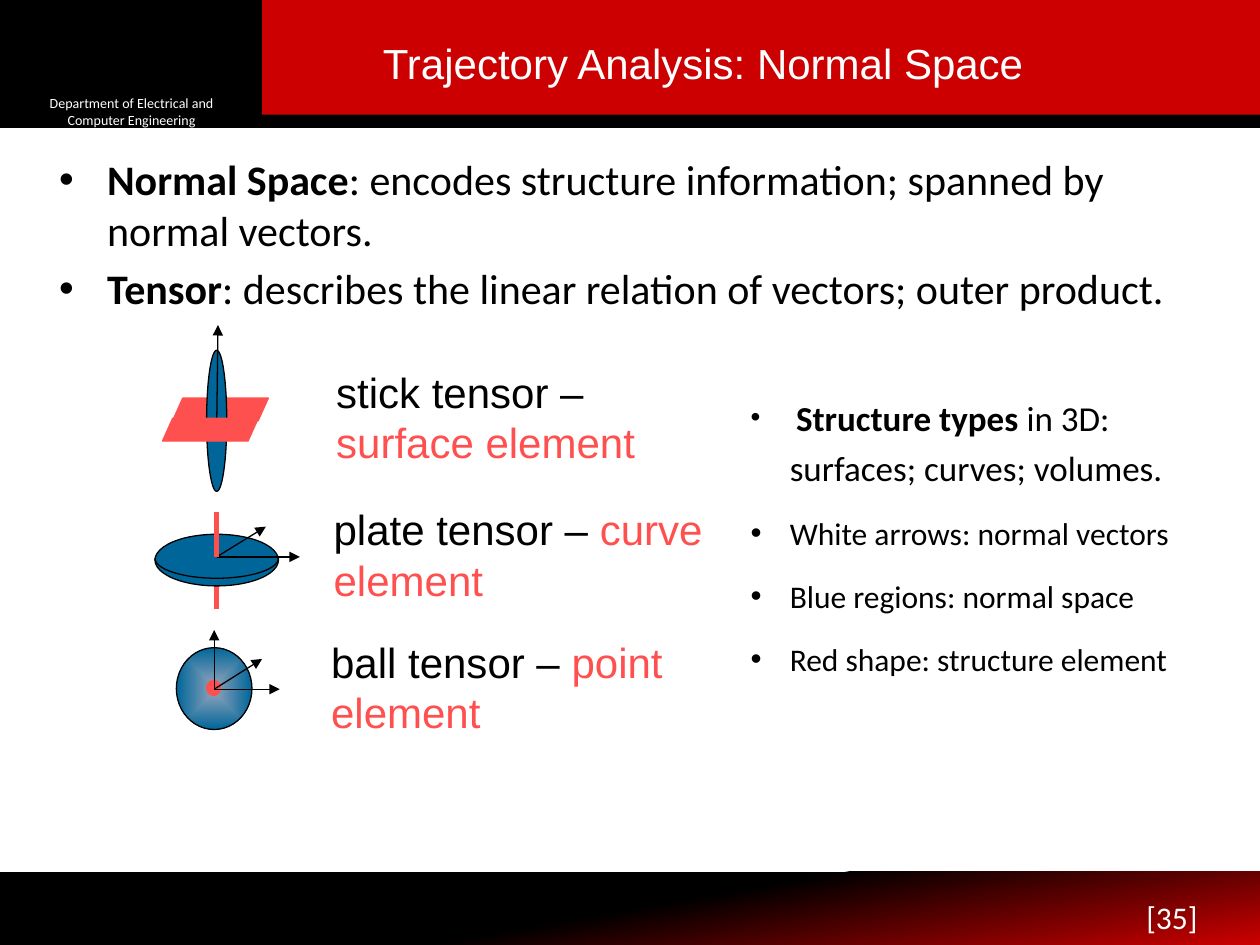
"""Builds the lecture slide on normal space and the three tensor types."""
import math
from dataclasses import dataclass

import pptx
import pptx.util
from lxml import etree
from pptx.dml.color import RGBColor
from pptx.enum.shapes import MSO_CONNECTOR, MSO_SHAPE
from pptx.enum.text import MSO_ANCHOR, MSO_AUTO_SIZE, PP_ALIGN
from pptx.oxml import parse_xml
from pptx.oxml.ns import nsdecls, qn
from pptx.util import Inches, Pt


@dataclass(frozen=True)
class Theme:
    black: str = "000000"
    white: str = "FFFFFF"
    banner: str = "CC0000"
    normal: str = "006699"
    glow: str = "8FA2BB"
    element: str = "FF5050"
    heading_font: str = "Arial"
    body_font: str = "Calibri"
    large: int = 24
    medium: int = 20
    note: int = 18
    lead: int = 16
    small: int = 8


theme = Theme()


def add_block(shapes, kind, bounds, fill, outline=None, weight=0.75):
    block = shapes.add_shape(kind, *map(Inches, bounds))
    block.shadow.inherit = False
    block.fill.solid()
    block.fill.fore_color.rgb = RGBColor.from_string(fill)
    if outline:
        block.line.color.rgb = RGBColor.from_string(outline)
        block.line.width = Pt(weight)
    else:
        block.line.fill.background()
    return block


def write(para, spans, size, font=theme.body_font, color=theme.black, indent=None):
    if indent:
        properties = para._p.get_or_add_pPr()
        properties.set("marL", str(Inches(indent)))
        properties.set("indent", str(-Inches(indent)))
        etree.SubElement(properties, qn("a:buFont")).set("typeface", "Arial")
        etree.SubElement(properties, qn("a:buChar")).set("char", "•")
    para.font.name = font
    para.font.size = Pt(size)
    para.font.color.rgb = RGBColor.from_string(color)
    for text, style in spans:
        span = para.add_run()
        span.text = text
        if "bold" in style:
            span.font.bold = style["bold"]
        if "size" in style:
            span.font.size = Pt(style["size"])
        if "color" in style:
            span.font.color.rgb = RGBColor.from_string(style["color"])


deck = pptx.Presentation()
deck.slide_width, deck.slide_height = Inches(10), Inches(7.5)
page = deck.slides.add_slide(deck.slide_layouts[1])

footer = add_block(page.shapes, MSO_SHAPE.RECTANGLE, (0, 6.92, 10, 0.58), theme.black)
footer.fill.gradient()
footer.fill.gradient_angle = 280
for stop, position, color in zip(footer.fill.gradient_stops, (0.5, 1), (theme.black, theme.banner)):
    stop.position = position
    stop.color.rgb = RGBColor.from_string(color)
add_block(page.shapes, MSO_SHAPE.RECTANGLE, (0, 0, 10, 1), theme.black, theme.black, 2)
add_block(page.shapes, MSO_SHAPE.RECTANGLE, (2.08, -0.01, 7.92, 0.92), theme.banner)
department = add_block(page.shapes, MSO_SHAPE.RECTANGLE, (0.17, 0.76, 1.75, 0.25), theme.black)
department.text_frame.vertical_anchor = MSO_ANCHOR.MIDDLE
para = department.text_frame.paragraphs[0]
para.alignment = PP_ALIGN.CENTER
write(para, [("Department of Electrical and Computer Engineering", {})], theme.small, color=theme.white)

title, body = page.shapes.title, page.placeholders[1]
for holder, bounds in ((title, (1.04, 0.25, 9.08, 0.64)), (body, (0.37, 1.17, 9.22, 1.42))):
    holder.element.getparent().append(holder.element)
    holder.left, holder.top, holder.width, holder.height = map(Inches, bounds)
    holder.text_frame.auto_size = MSO_AUTO_SIZE.NONE
    holder.text_frame.vertical_anchor = MSO_ANCHOR.TOP

para = title.text_frame.paragraphs[0]
para.alignment = PP_ALIGN.CENTER
write(para, [("Trajectory Analysis: Normal Space", {})], theme.large, theme.heading_font, theme.white)

definitions = [
    ("Normal Space", ": encodes structure information; spanned by normal vectors."),
    ("Tensor", ": describes the linear relation of vectors; outer product."),
]
for index, (term, meaning) in enumerate(definitions):
    para = body.text_frame.add_paragraph() if index else body.text_frame.paragraphs[0]
    para.space_before = Pt(4.8 if index else 0)
    write(para, [(term, {"bold": True}), (meaning, {"bold": False})], theme.large, indent=0.38)

ARROW, BAR = "arrow", "bar"
SHEET, OVAL = MSO_SHAPE.PARALLELOGRAM, MSO_SHAPE.OVAL
tensors = [
    ("stick tensor – ", "surface element", (2.57, 2.86, 3.27, 0.36), [
        (SHEET, (1.37, 3.16, 0.76, 0.18), theme.element, theme.element),
        (OVAL, (1.64, 2.78, 0.16, 1.12), theme.normal, theme.black),
        (ARROW, (1.72, 3.4, 1.73, 2.58), theme.black, None),
        (SHEET, (1.29, 3.32, 0.76, 0.18), theme.element, theme.element),
    ]),
    ("plate tensor – ", "curve element", (2.55, 3.95, 3.27, 0.36), [
        (BAR, (1.72, 4.42, 1.72, 4.83), theme.element, None),
        (OVAL, (1.23, 4.24, 0.98, 0.41), theme.normal, theme.black),
        (ARROW, (1.72, 4.42, 2.38, 4.42), theme.black, None),
        (ARROW, (1.72, 4.42, 2.11, 4.18), theme.black, None),
        (BAR, (1.72, 4.06, 1.72, 4.42), theme.element, None),
    ]),
    ("ball tensor – ", "point element", (2.53, 5, 3, 0.36), [
        (OVAL, (1.4, 5.14, 0.6, 0.65), theme.normal, theme.black),
        (OVAL, (1.64, 5.4, 0.11, 0.12), theme.element, theme.element),
        (ARROW, (1.7, 5.47, 2.22, 5.47), theme.black, None),
        (ARROW, (1.7, 5.47, 2.08, 5.23), theme.black, None),
        (ARROW, (1.7, 5.47, 1.7, 5), theme.black, None),
    ]),
]
groups = []
for name, element, bounds, parts in tensors:
    group = page.shapes.add_group_shape()
    groups.append(group)
    for kind, place, color, outline in parts:
        if kind in (ARROW, BAR):
            line = group.shapes.add_connector(MSO_CONNECTOR.STRAIGHT, *map(Inches, place))
            line.line.color.rgb = RGBColor.from_string(color)
            line.line.width = Pt(0.75 if kind == ARROW else 3)
            if kind == ARROW:
                etree.SubElement(line.line._get_or_add_ln(), qn("a:tailEnd")).set("type", "triangle")
            etree.SubElement(line._element.spPr, qn("a:effectLst"))
        else:
            block = add_block(group.shapes, kind, place, color, outline)
            if kind == SHEET:
                block.adjustments[0] = 0.447
    label = group.shapes.add_textbox(*map(Inches, bounds))
    label.text_frame.word_wrap = True
    write(label.text_frame.paragraphs[0], [(name, {}), (element, {"color": theme.element})],
          theme.large, theme.heading_font)

stick, plate, ball = groups
rim_points = [(Inches(1.72 + 0.49 * math.cos(math.pi * step / 32)),
               Inches(4.43 + 0.16 * math.sin(math.pi * step / 32))) for step in range(33)]
builder = plate.shapes.build_freeform(*rim_points[0])
builder.add_line_segments(rim_points[1:], close=False)
rim = builder.convert_to_shape()
rim.shadow.inherit = False
rim.fill.background()
rim.line.color.rgb = RGBColor.from_string(theme.black)
rim.line.width = Pt(0.75)

sphere = ball.shapes[0]
sphere.fill.gradient()
for stop, color in zip(sphere.fill.gradient_stops, (theme.glow, theme.normal)):
    stop.color.rgb = RGBColor.from_string(color)
linear = sphere.element.spPr.find(qn("a:gradFill")).find(qn("a:lin"))
linear.getparent().replace(linear, parse_xml(
    f'<a:path {nsdecls("a")} path="shape">'
    '<a:fillToRect l="50000" t="50000" r="50000" b="50000"/></a:path>'))

legend = page.shapes.add_textbox(*map(Inches, (5.86, 3.03, 3.55, 2.42)))
legend.text_frame.word_wrap = True
notes = [
    [(" ", {"size": theme.lead}),
     ("Structure types ", {"size": theme.medium, "bold": True}),
     ("in 3D: surfaces; curves; volumes.", {"size": theme.medium})],
    [("White arrows: normal vectors", {})],
    [("Blue regions: normal space", {})],
    [("Red shape: structure element", {})],
]
for index, spans in enumerate(notes):
    para = legend.text_frame.add_paragraph() if index else legend.text_frame.paragraphs[0]
    para.line_spacing = 1.2
    para.space_after = Pt(10)
    write(para, spans, theme.note, indent=0.31)

number = page.shapes.add_textbox(*map(Inches, (9, 7.08, 0.66, 0.33)))
number.text_frame.word_wrap = True
write(number.text_frame.paragraphs[0], [("[35]", {})], theme.note, color=theme.white)

deck.save("out.pptx")
